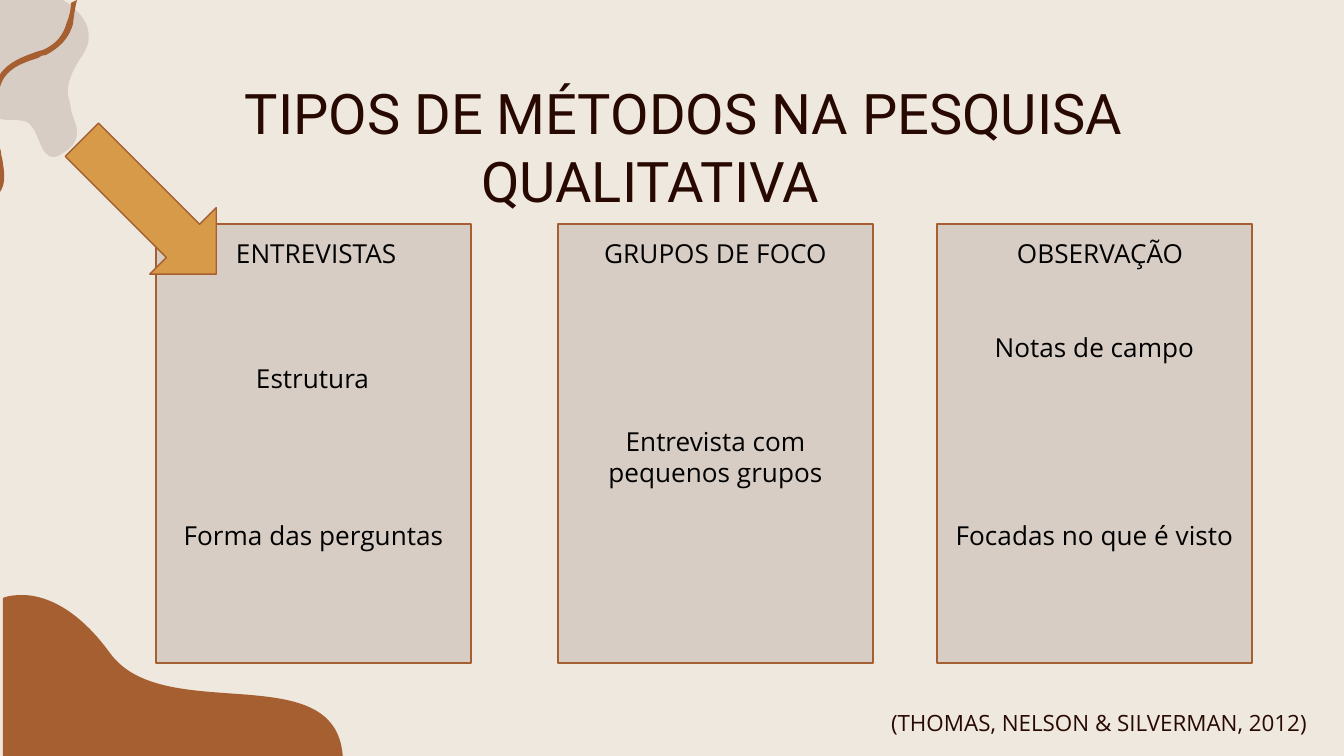
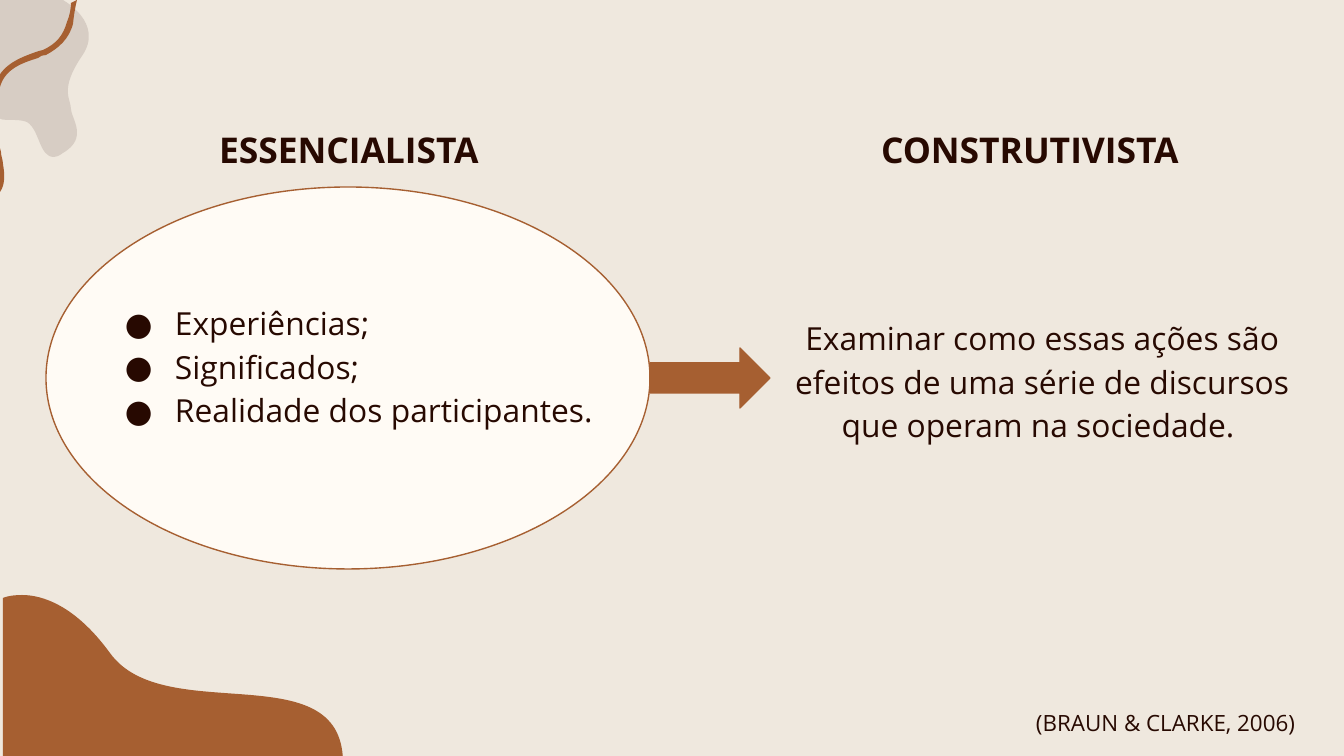
from dataclasses import dataclass

from lxml import etree
from pptx import Presentation
from pptx.dml.color import RGBColor
from pptx.enum.shapes import MSO_SHAPE
from pptx.enum.text import MSO_ANCHOR, PP_ALIGN
from pptx.oxml.ns import qn
from pptx.util import Emu, Pt

RECTANGLE = MSO_SHAPE.RECTANGLE
OVAL = MSO_SHAPE.OVAL
RIGHT_ARROW = MSO_SHAPE.RIGHT_ARROW
TOP = MSO_ANCHOR.TOP
LEFT = PP_ALIGN.LEFT
CENTER = PP_ALIGN.CENTER

EMU_PER_PX = 914400 / 134.4


@dataclass(frozen=True)
class Theme:
    """Colours, fonts and sizes shared by the slides."""
    background: str = "EFE8DE"
    brown: str = "A65F31"
    taupe: str = "D7CDC4"
    ochre: str = "D79A49"
    ivory: str = "FFFBF5"
    ink: str = "270901"
    black: str = "000000"
    title_font: str = "Roboto"
    body_font: str = "Open Sans"
    title_size: int = 30
    heading_size: int = 19
    body_size: int = 17
    card_size: int = 14
    citation_size: int = 12
    card_line: float = 16.8
    body_spacing: float = 1.15
    outline: float = 0.75
    inset: int = 13
    indent: int = 67
    bullet_hang: int = 50


@dataclass(frozen=True)
class Box:
    """A rectangle in px."""
    left: int
    top: int
    width: int
    height: int

    def inner(self, left, top, width, height):
        """Return a box placed relative to this one."""
        return Box(self.left + left, self.top + top, width, height)

    def emu(self):
        """Return the four lengths in EMU."""
        return [px(value) for value in (self.left, self.top, self.width, self.height)]


THEME = Theme()
PAGE = Box(0, 0, 1344, 756)

HILL = ((22, 595), [
    (9, 595, 3, 598, 3, 598), (3, 761), (343, 761),
    (341, 653, 164, 728, 110, 653), (75, 605, 42, 595, 22, 595)])
CLOUD = ((63, 0), [
    (63, 0, 105, 23, 82, 56), (59, 90, 71, 99, 71, 109),
    (71, 118, 89, 138, 63, 153), (59, 156, 56, 157, 54, 157),
    (39, 157, 40, 130, 27, 122), (22, 120, 16, 120, 11, 120),
    (9, 120, 8, 120, 7, 120), (0, 120, -4, 118, -8, 109),
    (-11, 102, -16, 101, -24, 101), (-28, 101, -32, 101, -36, 101),
    (-48, 101, -63, 99, -71, 81), (-71, 0)])
RIBBON = ((-38, 199), [
    (-32, 199, -27, 198, -23, 196), (-22, 196),
    (-15, 195, -7, 194, -3, 188), (1, 183, 0, 171, -1, 165),
    (-3, 160, -3, 156, -4, 152), (-5, 144, -7, 136, -8, 128),
    (-9, 113, -9, 98, -5, 85), (1, 65, 19, 58, 36, 52),
    (38, 51, 40, 51, 43, 50), (56, 44, 63, 36, 67, 22),
    (70, 15, 71, 8, 71, 3), (77, 0), (75, 8, 74, 15, 73, 24),
    (69, 39, 59, 48, 46, 55), (43, 55, 40, 56, 38, 58),
    (22, 63, 5, 69, 0, 87), (-5, 99, -4, 114, -3, 128),
    (-3, 136, -1, 144, 1, 152), (1, 156, 3, 160, 3, 164),
    (5, 175, 5, 185, 0, 192), (-4, 198, -13, 200, -20, 202),
    (-22, 202), (-26, 203, -31, 203, -35, 204)])


def px(value):
    """Turn px into EMU."""
    return Emu(round(value * EMU_PER_PX))


def color(value):
    """Turn a hex string into a colour."""
    return RGBColor.from_string(value)


def paint(shape, fill, line=None):
    """Set the fill and outline of a shape without a shadow."""
    shape.shadow.inherit = False
    shape.fill.solid()
    shape.fill.fore_color.rgb = color(fill)
    if line:
        shape.line.color.rgb = color(line)
        shape.line.width = Pt(THEME.outline)
    else:
        shape.line.fill.background()


def add_figure(slide, kind, box, fill):
    """Add a preset shape with the brown outline."""
    shape = slide.shapes.add_shape(kind, *box.emu())
    paint(shape, fill, THEME.brown)
    return shape


def bend(shape, box, segments):
    """Turn the straight sides that stand for cubic segments into curves."""
    sides = list(shape._element.iter(qn("a:lnTo")))
    for side, segment in zip(sides, segments):
        if len(segment) == 2:
            continue
        side.clear()
        curve = etree.SubElement(side.getparent(), qn("a:cubicBezTo"))
        side.getparent().replace(side, curve)
        for x, y in zip(segment[::2], segment[1::2]):
            point = etree.SubElement(curve, qn("a:pt"))
            point.set("x", str(px(box.left + x) - shape.left))
            point.set("y", str(px(box.top + y) - shape.top))


def add_blob(slide, box, outline, fill):
    """Add a curved outline placed from the corner of the box."""
    start, segments = outline
    anchors = [start] + [segment[-2:] for segment in segments]
    points = [(px(box.left + x), px(box.top + y)) for x, y in anchors]
    builder = slide.shapes.build_freeform(*points[0], scale=1.0)
    builder.add_line_segments(points[1:], close=True)
    shape = builder.convert_to_shape()
    bend(shape, box, segments)
    paint(shape, fill)


def prepare_frame(shape):
    """Give a shape a wrapping, top-anchored text frame."""
    frame = shape.text_frame
    frame.word_wrap = True
    frame.vertical_anchor = TOP
    frame.margin_left = frame.margin_right = px(THEME.inset)
    frame.margin_top = frame.margin_bottom = px(THEME.inset)
    return frame


def set_indent(paragraph, left, first):
    """Set the left margin and first-line indent in px."""
    properties = paragraph._p.get_or_add_pPr()
    properties.set("marL", str(px(left)))
    properties.set("indent", str(px(first)))
    return properties


def add_bullet(paragraph):
    """Give a paragraph a hanging round bullet."""
    properties = set_indent(paragraph, THEME.indent, -THEME.bullet_hang)
    bullet_color = etree.SubElement(properties, qn("a:buClr"))
    etree.SubElement(bullet_color, qn("a:srgbClr")).set("val", THEME.ink)
    etree.SubElement(properties, qn("a:buFont")).set("typeface", THEME.body_font)
    etree.SubElement(properties, qn("a:buChar")).set("char", "●")


def add_run(paragraph, text, size, ink=THEME.ink, font=THEME.body_font, bold=False):
    """Add one formatted run."""
    run = paragraph.add_run()
    run.text = text
    run.font.name = font
    run.font.size = Pt(size)
    run.font.bold = bold
    run.font.color.rgb = color(ink)


def add_text(slide, box, lines, size, align=LEFT, spacing=None, bullets=False, **style):
    """Add a text box with one paragraph a line."""
    frame = prepare_frame(slide.shapes.add_textbox(*box.emu()))
    for index, line in enumerate(lines):
        paragraph = frame.add_paragraph() if index else frame.paragraphs[0]
        if bullets:
            add_bullet(paragraph)
        paragraph.alignment = align
        if spacing:
            paragraph.line_spacing = spacing
        add_run(paragraph, line, size, **style)
    return frame


def add_title(slide, box, text):
    """Add the centred slide title."""
    frame = add_text(slide, box, [text], THEME.title_size, CENTER, font=THEME.title_font)
    set_indent(frame.paragraphs[0], 0, THEME.indent)


def add_citation(slide, box, width, text):
    """Add the citation in the bottom right corner of the box."""
    place = box.inner(box.width - width, box.height - 60, width, 60)
    add_text(slide, place, [text], THEME.citation_size)


def add_card(slide, box, entries):
    """Add a method card from (text, blank lines above, left indent) entries."""
    frame = prepare_frame(add_figure(slide, RECTANGLE, box, THEME.taupe))
    for index, (text, gap, indent) in enumerate(entries):
        paragraph = frame.add_paragraph() if index else frame.paragraphs[0]
        paragraph.alignment = LEFT if indent else CENTER
        set_indent(paragraph, indent, 0)
        if gap:
            paragraph.space_before = Pt(gap * THEME.card_line)
        add_run(paragraph, text, THEME.card_size, THEME.black)


def add_page(presentation):
    """Add a blank slide with the corner decoration."""
    slide = presentation.slides.add_slide(presentation.slide_layouts[6])
    add_blob(slide, PAGE, HILL, THEME.brown)
    add_blob(slide, PAGE, CLOUD, THEME.taupe)
    add_blob(slide, PAGE, RIBBON, THEME.brown)
    return slide


def add_methods_slide(presentation, box):
    """Add the slide on the types of qualitative methods."""
    slide = add_page(presentation)
    add_title(slide, box.inner(106, 66, 1089, 224), "TIPOS DE MÉTODOS NA PESQUISA QUALITATIVA")
    cards = [
        (156, [("ENTREVISTAS", 0, THEME.indent), ("Estrutura", 3, 87),
               ("Forma das perguntas", 4, 0)]),
        (558, [("GRUPOS DE FOCO", 0, 0), ("Entrevista com pequenos grupos", 5, 0)]),
        (937, [("OBSERVAÇÃO", 0, THEME.indent), ("Notas de campo", 2, 0),
               ("Focadas no que é visto", 5, 0)]),
    ]
    for left, entries in cards:
        add_card(slide, box.inner(left, 224, 315, 439), entries)
    arrow = add_figure(slide, RIGHT_ARROW, box.inner(54, 160, 190, 94), THEME.ochre)
    arrow.rotation = 45
    add_citation(slide, box, 466, "(THOMAS, NELSON & SILVERMAN, 2012)")


def add_approaches_slide(presentation, box):
    """Add the slide on the essentialist and constructivist approaches."""
    slide = add_page(presentation)
    add_citation(slide, box, 321, "(BRAUN & CLARKE, 2006)")
    add_figure(slide, OVAL, box.inner(46, 187, 604, 382), THEME.ivory)
    for left, width, heading in ((206, 304, "ESSENCIALISTA"), (868, 335, "CONSTRUTIVISTA")):
        add_text(slide, box.inner(left, 115, width, 60), [heading], THEME.heading_size, bold=True)
    add_text(slide, box.inner(95, 285, 525, 208),
             ["Experiências;", "Significados;", "Realidade dos participantes."],
             THEME.body_size, spacing=THEME.body_spacing, bullets=True)
    add_text(slide, box.inner(780, 300, 525, 208),
             ["Examinar como essas ações são efeitos de uma série de discursos "
              "que operam na sociedade. "],
             THEME.body_size, CENTER, THEME.body_spacing)
    add_figure(slide, RIGHT_ARROW, box.inner(650, 348, 120, 60), THEME.brown)


def main():
    """Build and save the presentation."""
    presentation = Presentation()
    presentation.slide_width = px(PAGE.width)
    presentation.slide_height = px(PAGE.height)
    background = presentation.slide_master.background.fill
    background.solid()
    background.fore_color.rgb = color(THEME.background)
    add_methods_slide(presentation, PAGE)
    add_approaches_slide(presentation, PAGE)
    presentation.save("out.pptx")


if __name__ == "__main__":
    main()
